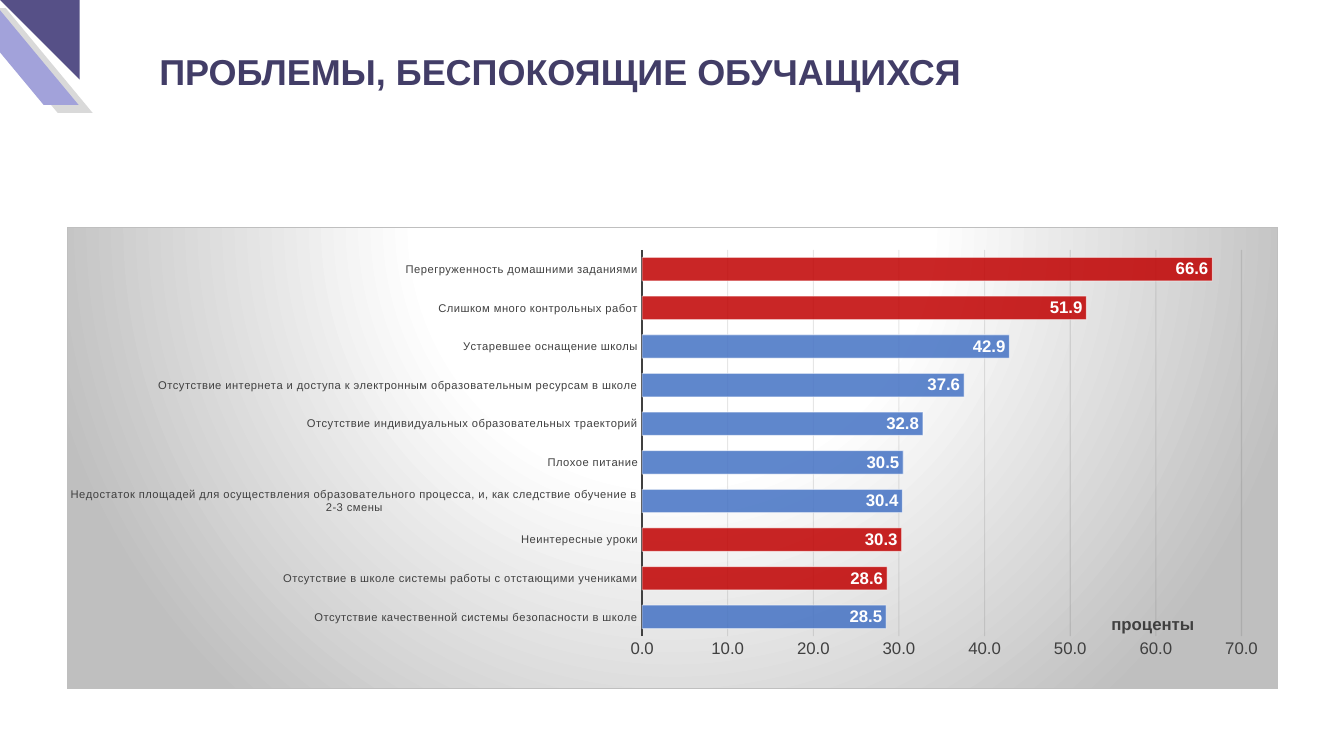
"""Slide with a bar chart of the problems that worry pupils."""
import dataclasses
import typing

import lxml.etree
import pptx
import pptx.chart.data
import pptx.dml.color
import pptx.enum.chart
import pptx.enum.shapes
import pptx.enum.text
import pptx.oxml
import pptx.oxml.ns
import pptx.util

RGBColor = pptx.dml.color.RGBColor
MSO_SHAPE = pptx.enum.shapes.MSO_SHAPE
Pt = pptx.util.Pt
qn = pptx.oxml.ns.qn

WHITE = RGBColor(0xFF, 0xFF, 0xFF)
BLACK = RGBColor(0x00, 0x00, 0x00)
SHADE = RGBColor(0xD9, 0xD9, 0xD9)
LILAC = RGBColor(0xA2, 0xA2, 0xDA)
VIOLET = RGBColor(0x56, 0x50, 0x87)
HEADING = RGBColor(0x42, 0x3D, 0x67)
GRAPHITE = RGBColor(0x40, 0x40, 0x40)
GRID = RGBColor(0x0D, 0x0D, 0x0D)
BLUE = RGBColor(0x44, 0x72, 0xC4)
RED = RGBColor(0xC0, 0x00, 0x00)
FONT = "Arial"
SLIDE_WIDTH = pptx.util.Inches(13.33)
SLIDE_HEIGHT = pptx.util.Inches(7.5)

BACKDROP = (
    f'<c:spPr {pptx.oxml.ns.nsdecls("c", "a")}><a:gradFill><a:gsLst>'
    '<a:gs pos="0"><a:srgbClr val="FFFFFF"/></a:gs>'
    '<a:gs pos="39000"><a:srgbClr val="FFFFFF"/></a:gs>'
    '<a:gs pos="100000"><a:srgbClr val="BFBFBF"/></a:gs></a:gsLst>'
    '<a:path path="circle"><a:fillToRect l="50000" t="-80000" r="50000" b="180000"/></a:path>'
    '</a:gradFill><a:ln w="9525"><a:solidFill><a:srgbClr val="BFBFBF"/></a:solidFill></a:ln></c:spPr>'
)


@dataclasses.dataclass(frozen=True)
class Frame:
    """Place on the slide in per cent of its width and height."""
    left: float
    top: float
    width: float
    height: float

    def lengths(self) -> tuple[int, int, int, int]:
        """Return left, top, width and height in EMU."""
        return (int(SLIDE_WIDTH * self.left / 100), int(SLIDE_HEIGHT * self.top / 100),
                int(SLIDE_WIDTH * self.width / 100), int(SLIDE_HEIGHT * self.height / 100))


@dataclasses.dataclass(frozen=True)
class CornerPiece:
    """One piece of the corner ornament."""
    preset: MSO_SHAPE
    frame: Frame
    color: RGBColor
    flips: tuple[str, ...]
    slant: typing.Optional[float] = None


@dataclasses.dataclass(frozen=True)
class Problem:
    """One answer and the percentage of pupils who gave it."""
    label: str
    percent: float
    color: RGBColor = BLUE


CORNER = [
    CornerPiece(MSO_SHAPE.PARALLELOGRAM, Frame(-2.18, 1.07, 9.08, 13.87), SHADE, ("flipH",), 0.83),
    CornerPiece(MSO_SHAPE.PARALLELOGRAM, Frame(-3.23, 0, 9.08, 13.87), LILAC, ("flipH",), 0.83),
    CornerPiece(MSO_SHAPE.RIGHT_TRIANGLE, Frame(0, 0, 5.93, 10.53), VIOLET, ("flipH", "flipV")),
]
HEADING_FRAME = Frame(11.85, 5.87, 71.49, 7.07)
CHART_FRAME = Frame(4.95, 30, 90.17, 61.2)
PROBLEMS = [
    Problem("Отсутствие качественной системы безопасности в школе", 28.5),
    Problem("Отсутствие в школе системы работы с отстающими учениками", 28.6, RED),
    Problem("Неинтересные уроки", 30.3, RED),
    Problem("Недостаток площадей для осуществления образовательного процесса, "
            "и, как следствие обучение в 2-3 смены", 30.4),
    Problem("Плохое питание", 30.5),
    Problem("Отсутствие индивидуальных образовательных траекторий", 32.8),
    Problem("Отсутствие интернета и доступа к электронным образовательным ресурсам в школе", 37.6),
    Problem("Устаревшее оснащение школы", 42.9),
    Problem("Слишком много контрольных работ", 51.9, RED),
    Problem("Перегруженность домашними заданиями", 66.6, RED),
]


def style_font(font, size: float, color: RGBColor, bold: bool = False) -> None:
    """Set typeface, size, colour and weight."""
    font.name, font.size, font.bold = FONT, Pt(size), bold
    font.color.rgb = color


def set_opacity(color, percent: int) -> None:
    """Make a colour element partly transparent."""
    lxml.etree.SubElement(color, qn("a:alpha")).set("val", str(percent * 1000))


def set_layout(parent, **shares: float) -> None:
    """Place a chart part by shares of the chart area."""
    layout = parent.find(qn("c:layout"))
    if layout is None:
        layout = lxml.etree.Element(qn("c:layout"))
        parent.insert(0, layout)
    manual = lxml.etree.SubElement(layout, qn("c:manualLayout"))
    if "w" in shares:
        lxml.etree.SubElement(manual, qn("c:layoutTarget")).set("val", "inner")
    for side in ("x", "y"):
        lxml.etree.SubElement(manual, qn(f"c:{side}Mode")).set("val", "edge")
    for side, share in shares.items():
        lxml.etree.SubElement(manual, qn(f"c:{side}")).set("val", str(share))


def draw_corner(slide, piece: CornerPiece) -> None:
    """Draw one piece of the corner ornament."""
    shape = slide.shapes.add_shape(piece.preset, *piece.frame.lengths())
    shape.shadow.inherit = False
    shape.fill.solid()
    shape.fill.fore_color.rgb = piece.color
    shape.line.fill.background()
    if piece.slant is not None:
        shape.adjustments[0] = piece.slant
    for flip in piece.flips:
        shape._element.spPr.find(qn("a:xfrm")).set(flip, "1")


def write_heading(slide, text: str) -> None:
    """Fill the title placeholder."""
    heading = slide.shapes.title
    heading.left, heading.top, heading.width, heading.height = HEADING_FRAME.lengths()
    frame = heading.text_frame
    frame.margin_left = 0
    frame.word_wrap = True
    frame.auto_size = pptx.enum.text.MSO_AUTO_SIZE.NONE
    frame.vertical_anchor = pptx.enum.text.MSO_ANCHOR.MIDDLE
    frame.paragraphs[0].alignment = pptx.enum.text.PP_ALIGN.LEFT
    run = frame.paragraphs[0].add_run()
    run.text = text
    style_font(run.font, 25.7, HEADING, True)


def paint_bar(bar, color: RGBColor) -> None:
    """Give a series or point its fill and outline."""
    bar.format.fill.solid()
    bar.format.fill.fore_color.rgb = color
    bar.format.line.color.rgb = WHITE
    bar.format.line.width = Pt(0.75)


def style_bars(plot) -> None:
    """Colour the bars and label them with their values."""
    plot.gap_width = 65
    plot.vary_by_categories = False
    answers = plot.series[0]
    paint_bar(answers, BLUE)
    for index, problem in enumerate(PROBLEMS):
        if problem.color != BLUE:
            paint_bar(answers.points[index], problem.color)
    for color in answers._element.iter(qn("a:srgbClr")):
        outline = color.getparent().getparent().tag == qn("a:ln")
        set_opacity(color, 50 if outline else 85)
    labels = answers.data_labels
    labels.show_value = True
    labels.number_format, labels.number_format_is_linked = "0.0", False
    labels.position = pptx.enum.chart.XL_LABEL_POSITION.INSIDE_END
    style_font(labels.font, 12, WHITE, True)


def style_axes(chart) -> None:
    """Format the answer axis and the percentage axis."""
    answers, percents = chart.category_axis, chart.value_axis
    for axis, size in ((answers, 8), (percents, 12)):
        axis.major_tick_mark = axis.minor_tick_mark = pptx.enum.chart.XL_TICK_MARK.NONE
        style_font(axis.tick_labels.font, size, GRAPHITE)
    answers.tick_labels.font._element.set("spc", "20")
    answers.format.line.color.rgb = GRAPHITE
    answers.format.line.width = Pt(1.5)
    percents.minimum_scale, percents.maximum_scale, percents.major_unit = 0, 70, 10
    percents.tick_labels.number_format = "0.0"
    percents.tick_labels.number_format_is_linked = False
    percents.format.line.fill.background()
    percents.major_gridlines.format.line.color.rgb = GRID
    percents.major_gridlines.format.line.width = Pt(0.75)
    for gridlines in chart._chartSpace.iter(qn("c:majorGridlines")):
        set_opacity(next(gridlines.iter(qn("a:srgbClr"))), 10)
    unit = percents.axis_title.text_frame.paragraphs[0].add_run()
    unit.text = "проценты"
    style_font(unit.font, 12, GRAPHITE, True)
    set_layout(percents.axis_title._element, x=0.86, y=0.83)


def draw_chart(slide) -> None:
    """Add the bar chart of problems."""
    data = pptx.chart.data.CategoryChartData(number_format="0.0")
    data.categories = [problem.label for problem in PROBLEMS]
    data.add_series("Series 1", [problem.percent for problem in PROBLEMS])
    chart = slide.shapes.add_chart(
        pptx.enum.chart.XL_CHART_TYPE.BAR_CLUSTERED, *CHART_FRAME.lengths(), data).chart
    chart.has_title = chart.has_legend = False
    style_font(chart.font, 10, BLACK)
    style_bars(chart.plots[0])
    style_axes(chart)
    area = chart._chartSpace.find(qn("c:chart"))
    set_layout(area.find(qn("c:plotArea")), x=0.475, y=0.049, w=0.495, h=0.837)
    area.addnext(pptx.oxml.parse_xml(BACKDROP))


def main() -> None:
    """Build and save the slide."""
    deck = pptx.Presentation()
    deck.slide_width, deck.slide_height = SLIDE_WIDTH, SLIDE_HEIGHT
    slide = deck.slides.add_slide(deck.slide_layouts[5])
    for piece in CORNER:
        draw_corner(slide, piece)
    write_heading(slide, "ПРОБЛЕМЫ, БЕСПОКОЯЩИЕ ОБУЧАЩИХСЯ")
    draw_chart(slide)
    deck.save("out.pptx")


if __name__ == "__main__":
    main()
